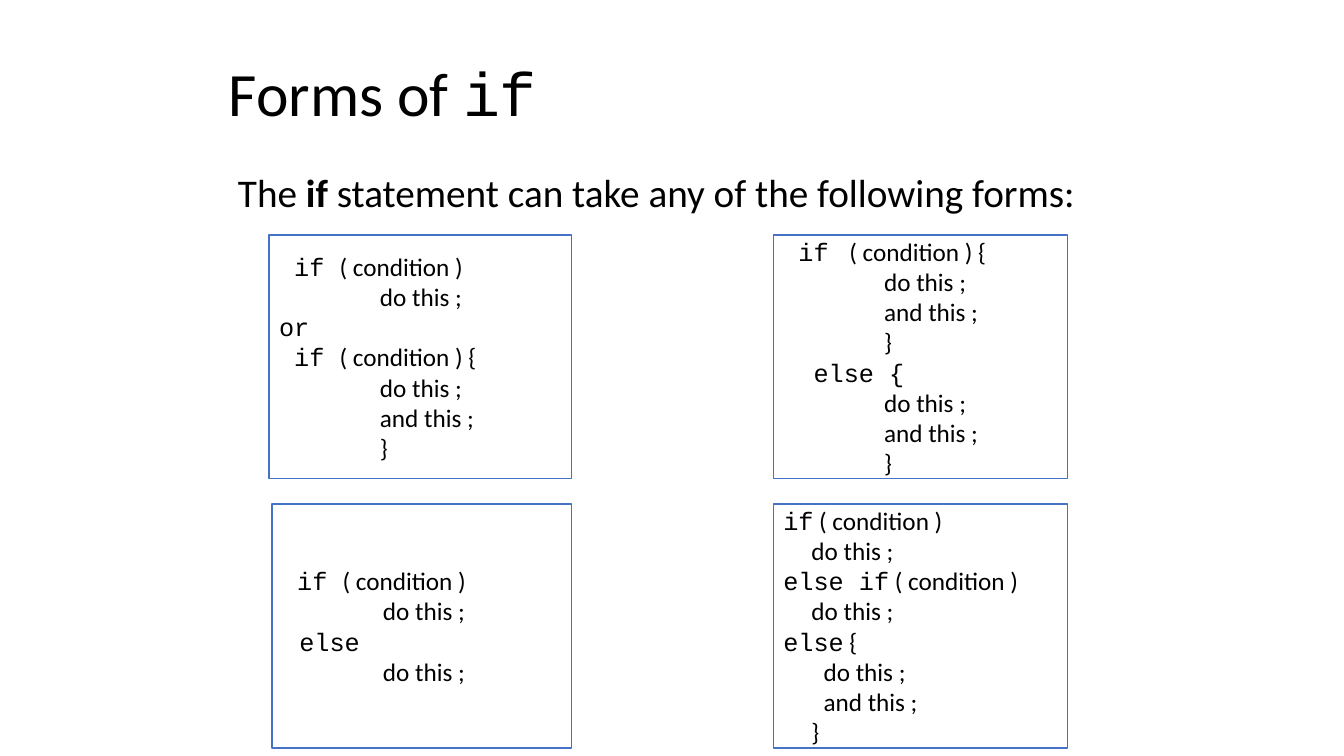
from pptx import Presentation
from pptx.dml.color import RGBColor
from pptx.enum import shapes, text
from pptx.oxml.ns import qn
from pptx.util import Inches, Pt
from lxml import etree

COLORS = {"text": "000000", "fill": "FFFFFF", "line": "4472C4"}
PLAIN, CODE = "Calibri", "Courier New"

# Indents in inches
STEP, TAB = 0.15, 1
ELSE, BODY, BLOCK = 0.17, 0.28, 0.4

DO, AND, CLOSE = "do this ;", "and this ;", "}"
DO_LINE, AND_LINE, CLOSE_LINE = [(TAB, "", t) for t in (DO, AND, CLOSE)]

# Each form: position and size, then lines of (indent, code, plain text)
FORMS = [
    ((2.67, 2.33, 3, 2.42), [
        (STEP, "if ", "( condition )"), DO_LINE,
        (0, "or", ""),
        (STEP, "if ", "( condition ) {"), DO_LINE, AND_LINE, CLOSE_LINE]),
    ((2.7, 5, 2.97, 2.42), [
        (STEP, "if ", "( condition )"), DO_LINE,
        (ELSE, "else", ""), DO_LINE]),
    ((7.67, 2.33, 2.92, 2.42), [
        (STEP, "if ", " ( condition ) {"), DO_LINE, AND_LINE, CLOSE_LINE,
        (2 * STEP, "else {", ""), DO_LINE, AND_LINE, CLOSE_LINE]),
    ((7.67, 5, 2.92, 2.42), [
        (0, "if", " ( condition )"), (BODY, "", DO),
        (0, "else if", " ( condition )"), (BODY, "", DO),
        (0, "else", " {"), (BLOCK, "", DO), (BLOCK, "", AND),
        (BODY, "", CLOSE)]),
]


def color(name):
    return RGBColor.from_string(COLORS[name])


def add_run(p, words, size, font=PLAIN, bold=False):
    r = p.add_run()
    r.text = words
    for key, value in {"name": font, "size": Pt(size), "bold": bold}.items():
        setattr(r.font, key, value)
    r.font.color.rgb = color("text")


def format_paragraph(p, indent=0, **values):
    values = {"alignment": text.PP_ALIGN.LEFT, **values}
    for key, value in values.items():
        setattr(p, key, value)
    pPr = p._p.get_or_add_pPr()
    pPr.set("marL", str(Inches(indent)))
    pPr.set("indent", "0")
    etree.SubElement(pPr, qn("a:buNone"))


def fill_placeholder(sp, box, anchor, runs, size, indent=0, **values):
    sp.left, sp.top, sp.width, sp.height = map(Inches, box)
    tf = sp.text_frame
    tf.auto_size = text.MSO_AUTO_SIZE.NONE
    tf.vertical_anchor = anchor
    p = tf.paragraphs[0]
    format_paragraph(p, indent, line_spacing=0.9, **values)
    for words, font, bold in runs:
        add_run(p, words, size, font, bold)


def add_form(s, box, lines):
    sp = s.shapes.add_shape(shapes.MSO_SHAPE.RECTANGLE, *map(Inches, box))
    sp.shadow.inherit = False
    sp.fill.solid()
    sp.fill.fore_color.rgb = color("fill")
    sp.line.color.rgb = color("line")
    sp.line.width = Pt(1)
    tf = sp.text_frame
    tf.word_wrap = True
    tf.vertical_anchor = text.MSO_ANCHOR.MIDDLE
    for i, (indent, code, plain) in enumerate(lines):
        p = tf.add_paragraph() if i else tf.paragraphs[0]
        format_paragraph(p, indent)
        for words, font in ((code, CODE), (plain, PLAIN)):
            if words:
                add_run(p, words, 18, font)


def main():
    prs = Presentation()
    prs.slide_width, prs.slide_height = Inches(13.33), Inches(7.5)
    s = prs.slides.add_slide(prs.slide_layouts[1])

    # Title and introduction
    fill_placeholder(
        s.shapes.title, (2.17, 0.33, 9, 1.25), text.MSO_ANCHOR.MIDDLE,
        [("Forms of ", PLAIN, False), ("if", CODE, False)], 44)
    fill_placeholder(
        s.placeholders[1], (2.17, 1.67, 9, 0.67), text.MSO_ANCHOR.TOP,
        [("The ", PLAIN, False), ("if ", PLAIN, True),
         ("statement can take any of the following forms:", PLAIN, False)],
        28, indent=0.09, space_before=Pt(10))

    # Forms of the statement
    for box, lines in FORMS:
        add_form(s, box, lines)

    prs.save("out.pptx")


if __name__ == "__main__":
    main()
